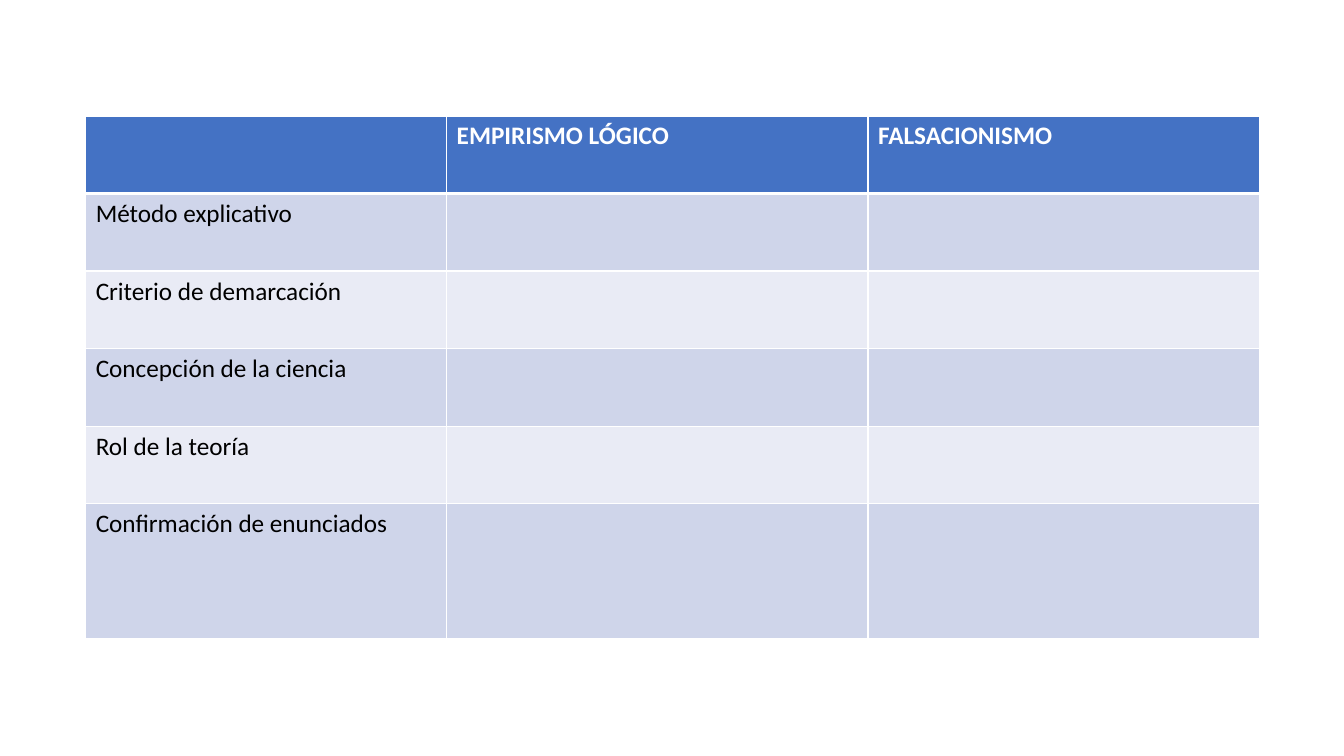
"""Build a comparison table of two philosophies of science."""
from lxml import etree
from pptx import Presentation
from pptx.dml.color import RGBColor
from pptx.oxml.ns import qn
from pptx.util import Inches, Pt

WHITE = RGBColor(0xFF, 0xFF, 0xFF)
BLACK = RGBColor(0, 0, 0)
HEADER_BLUE = RGBColor(0x44, 0x72, 0xC4)
BAND_DARK = RGBColor(0xCF, 0xD5, 0xEA)
BAND_LIGHT = RGBColor(0xE9, 0xEB, 0xF5)

HEADINGS = ["", "EMPIRISMO LÓGICO", "FALSACIONISMO"]
TOPICS = [
    "Método explicativo",
    "Criterio de demarcación",
    "Concepción de la ciencia",
    "Rol de la teoría",
    "Confirmación de enunciados",
]
COLUMN_WIDTHS = [3.58, 4.18, 3.88]
ROW_HEIGHT, LAST_ROW_HEIGHT = 0.77, 1.34


def add_borders(cell, widths):
    """Draw white borders on a cell, with a width in points for each side."""
    properties = cell._tc.get_or_add_tcPr()
    for side, width in widths.items():
        line = etree.SubElement(properties, qn(f"a:ln{side}"), w=str(Pt(width)))
        fill = etree.SubElement(line, qn("a:solidFill"))
        etree.SubElement(fill, qn("a:srgbClr"), val=str(WHITE))


def format_cell(cell, words, row):
    """Give a cell its borders, fill and text according to its row."""
    header = row == 0
    add_borders(cell, {"L": 1, "R": 1, "T": 3 if row == 1 else 1, "B": 3 if header else 1})
    cell.fill.solid()
    band = BAND_DARK if row % 2 else BAND_LIGHT
    cell.fill.fore_color.rgb = HEADER_BLUE if header else band
    para = cell.text_frame.paragraphs[0]
    fonts = [para.font]
    if words:
        span = para.add_run()
        span.text = words
        fonts.append(span.font)
    for font in fonts:
        for name, value in {"name": "Calibri", "size": Pt(18), "bold": header}.items():
            setattr(font, name, value)
        font.color.rgb = WHITE if header else BLACK


def add_comparison(page):
    """Add the table with its headings and topics."""
    rows = [HEADINGS] + [[topic, "", ""] for topic in TOPICS]
    heights = [ROW_HEIGHT] * len(TOPICS) + [LAST_ROW_HEIGHT]
    frame = page.shapes.add_table(
        len(rows), len(HEADINGS), Inches(0.85), Inches(1.15),
        Inches(sum(COLUMN_WIDTHS)), Inches(sum(heights)))
    table = frame.table
    for column, width in zip(table.columns, COLUMN_WIDTHS):
        column.width = Inches(width)
    for index, (row, height, entries) in enumerate(zip(table.rows, heights, rows)):
        row.height = Inches(height)
        for cell, words in zip(row.cells, entries):
            format_cell(cell, words, index)


def main():
    """Create and save the deck."""
    deck = Presentation()
    deck.slide_width, deck.slide_height = Inches(13.33), Inches(7.5)
    page = deck.slides.add_slide(deck.slide_layouts[6])
    add_comparison(page)
    deck.save("out.pptx")


if __name__ == "__main__":
    main()
